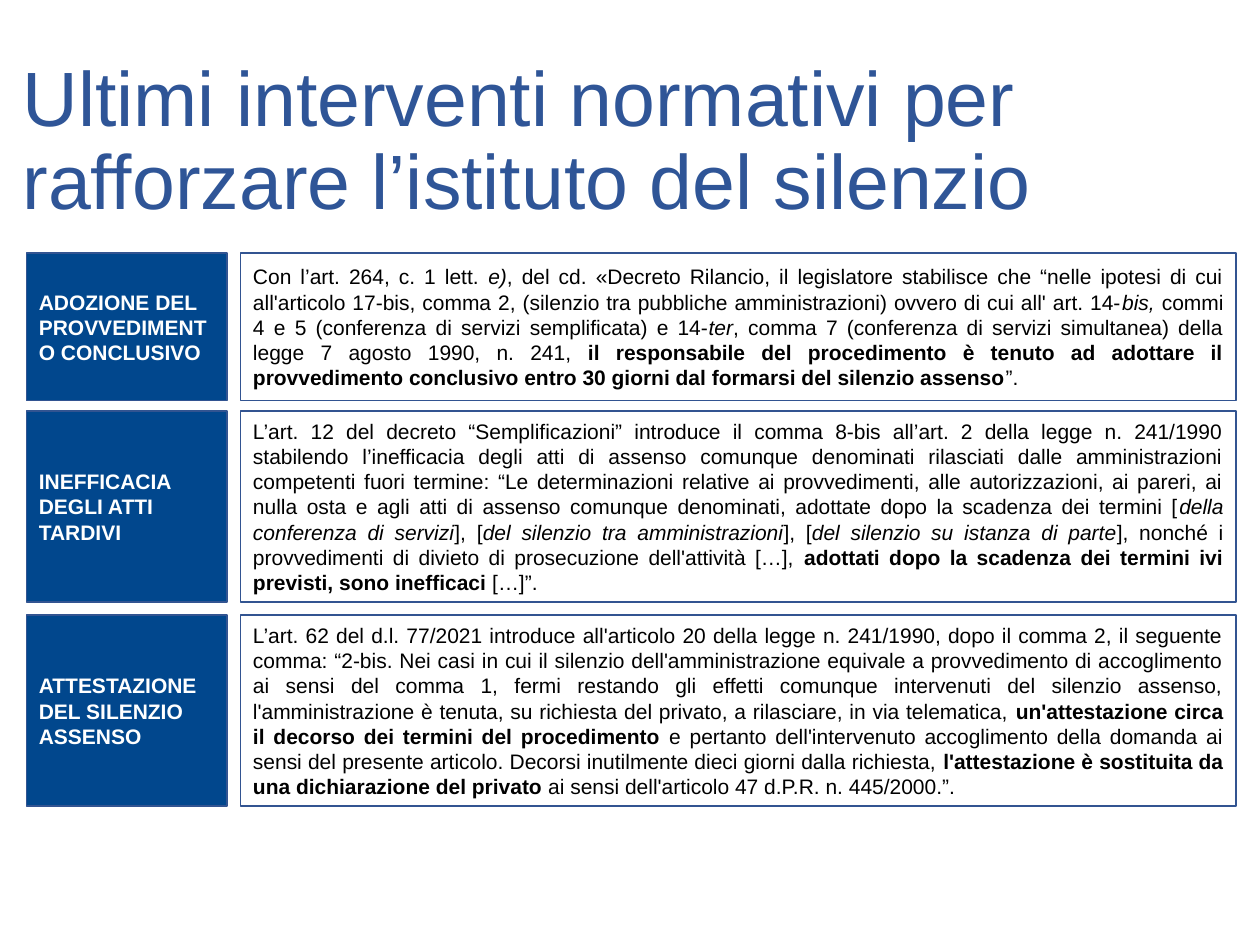
"""Build the slide on recent legislation strengthening administrative silence."""
from dataclasses import dataclass
from typing import Any

from pptx import Presentation
from pptx import util as u
from pptx.dml.color import RGBColor
from pptx.enum import shapes, text

TITLE_BLUE = RGBColor(0x2F, 0x55, 0x97)
LABEL_BLUE = RGBColor(0x01, 0x47, 0x8D)
BORDER_BLUE = RGBColor(0x32, 0x54, 0x91)
WHITE = RGBColor(0xFF, 0xFF, 0xFF)
BLACK = RGBColor(0, 0, 0)

PLAIN, BOLD, ITALIC = "plain", "bold", "italic"

ADOPTION = [
    ("Con l’art. 264, c. 1 lett. ", PLAIN),
    ("e)", ITALIC),
    (", del cd. «Decreto Rilancio, il legislatore stabilisce che “nelle ipotesi di cui "
     "all'articolo 17-bis, comma 2, (silenzio tra pubbliche amministrazioni) ovvero di cui "
     "all' art. 14-", PLAIN),
    ("bis,", ITALIC),
    (" commi 4 e 5 (conferenza di servizi semplificata) e 14-", PLAIN),
    ("ter", ITALIC),
    (", comma 7 (conferenza di servizi simultanea) della legge 7 agosto 1990, n. 241, ", PLAIN),
    ("il responsabile del procedimento è tenuto ad adottare il provvedimento conclusivo "
     "entro 30 giorni dal formarsi del silenzio assenso", BOLD),
    ("”.", PLAIN),
]
INEFFECTIVENESS = [
    ("L’art. 12 del decreto “Semplificazioni” introduce il comma 8-bis all’art. 2 della legge "
     "n. 241/1990 stabilendo l’inefficacia degli atti di assenso comunque denominati "
     "rilasciati dalle amministrazioni competenti fuori termine: “Le determinazioni relative "
     "ai provvedimenti, alle autorizzazioni, ai pareri, ai nulla osta e agli atti di assenso "
     "comunque denominati, adottate dopo la scadenza dei termini [", PLAIN),
    ("della conferenza di servizi", ITALIC),
    ("], [", PLAIN),
    ("del silenzio tra amministrazioni", ITALIC),
    ("], [", PLAIN),
    ("del silenzio su istanza di parte", ITALIC),
    ("], nonché i provvedimenti di divieto di prosecuzione dell'attività […], ", PLAIN),
    ("adottati dopo la scadenza dei termini ivi previsti, sono inefficaci ", BOLD),
    ("[…]”.", PLAIN),
]
ATTESTATION = [
    ("L’art. 62 del d.l. 77/2021 introduce all'articolo 20 della legge n. 241/1990, dopo il "
     "comma 2, il seguente comma: “2-bis. Nei casi in cui il silenzio dell'amministrazione "
     "equivale a provvedimento di accoglimento ai sensi del comma 1, fermi restando gli "
     "effetti comunque intervenuti del silenzio assenso, l'amministrazione è tenuta, su "
     "richiesta del privato, a rilasciare, in via telematica, ", PLAIN),
    ("un'attestazione circa il decorso dei termini del procedimento ", BOLD),
    ("e pertanto dell'intervenuto accoglimento della domanda ai sensi del presente articolo. "
     "Decorsi inutilmente dieci giorni dalla richiesta, ", PLAIN),
    ("l'attestazione è sostituita da una dichiarazione del privato ", BOLD),
    ("ai sensi dell'articolo 47 d.P.R. n. 445/2000.”.", PLAIN),
]
MEASURES = [
    ("ADOZIONE DEL PROVVEDIMENTO CONCLUSIVO", ADOPTION, 2.01, 1.17),
    ("INEFFICACIA DEGLI ATTI TARDIVI", INEFFECTIVENESS, 3.26, 1.52),
    ("ATTESTAZIONE DEL SILENZIO ASSENSO", ATTESTATION, 4.88, 1.52),
]


@dataclass
class SlideBuilder:
    """Hold the text style and the slide being filled."""
    slide: Any
    font: str = "Arial"
    title_size: int = 44
    body_size: int = 12

    def add_wording(self, frame, parts, size, color, align=text.PP_ALIGN.LEFT):
        """Fill a text frame with one paragraph of styled parts."""
        frame.word_wrap = True
        frame.vertical_anchor = text.MSO_ANCHOR.MIDDLE
        paragraph = frame.paragraphs[0]
        paragraph.alignment = align
        for words, style in parts:
            run = paragraph.add_run()
            run.text = words
            run.font.name = self.font
            run.font.size = u.Pt(size)
            run.font.color.rgb = color
            run.font.bold = style == BOLD
            run.font.italic = style == ITALIC
        return paragraph

    def add_title(self, words, left, top, width, height):
        """Add the slide heading."""
        heading = self.slide.shapes.add_textbox(
            u.Inches(left), u.Inches(top), u.Inches(width), u.Inches(height))
        paragraph = self.add_wording(
            heading.text_frame, [(words, PLAIN)], self.title_size, TITLE_BLUE)
        paragraph.line_spacing = 0.9

    def add_panel(self, left, top, width, height):
        """Add an outlined rectangle without fill."""
        panel = self.slide.shapes.add_shape(
            shapes.MSO_SHAPE.RECTANGLE,
            u.Inches(left), u.Inches(top), u.Inches(width), u.Inches(height))
        panel.shadow.inherit = False
        panel.fill.background()
        panel.line.color.rgb = BORDER_BLUE
        panel.line.width = u.Pt(1)
        return panel

    def add_measure(self, name, provisions, top, height):
        """Add a row with a filled label and its justified explanation."""
        label = self.add_panel(0.21, top, 1.59, height)
        label.fill.solid()
        label.fill.fore_color.rgb = LABEL_BLUE
        self.add_wording(label.text_frame, [(name, BOLD)], self.body_size, WHITE)
        explanation = self.add_panel(1.91, top, 7.9, height)
        self.add_wording(explanation.text_frame, provisions, self.body_size, BLACK,
                         text.PP_ALIGN.JUSTIFY)


def main():
    """Create and save the presentation."""
    deck = Presentation()
    deck.slide_width, deck.slide_height = u.Inches(10), u.Inches(7.5)
    builder = SlideBuilder(deck.slides.add_slide(deck.slide_layouts[6]))
    builder.add_title("Ultimi interventi normativi per rafforzare l’istituto del silenzio",
                      0.08, 0.41, 8.62, 1.45)
    for measure in MEASURES:
        builder.add_measure(*measure)
    deck.save("out.pptx")


if __name__ == "__main__":
    main()
